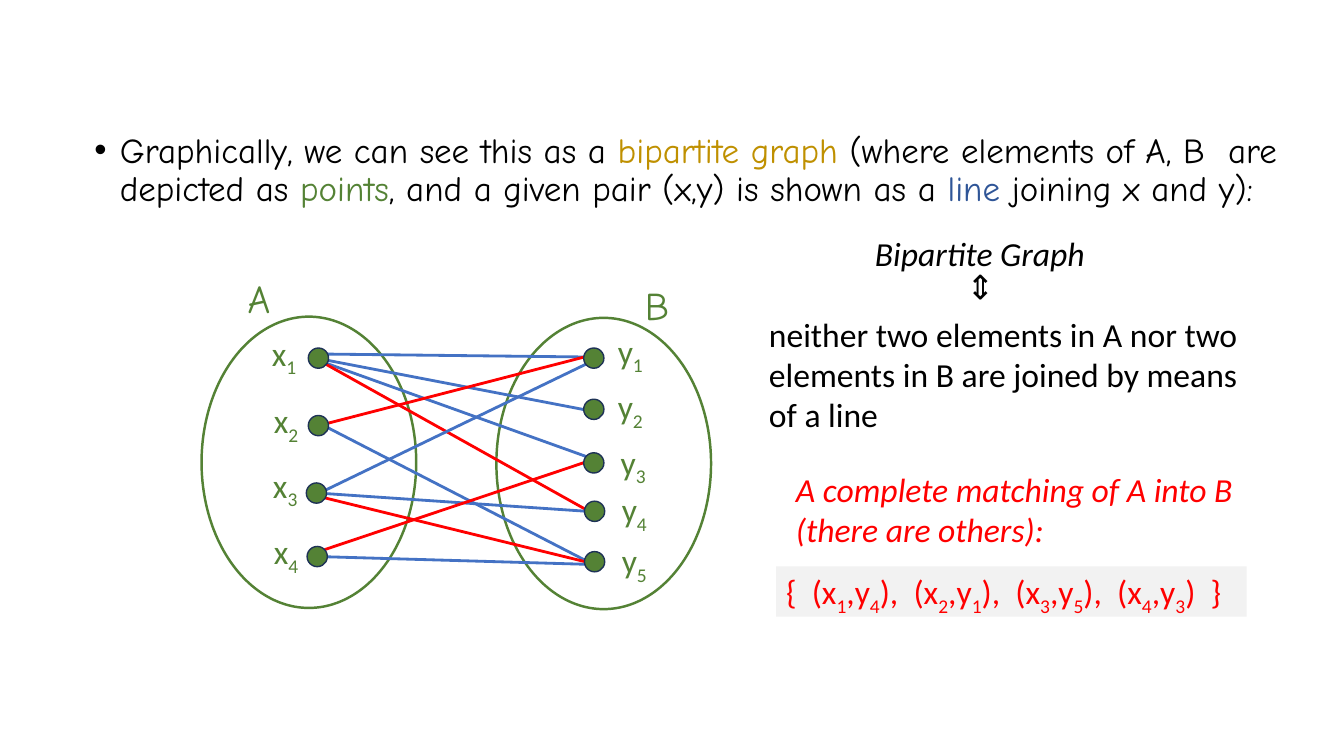
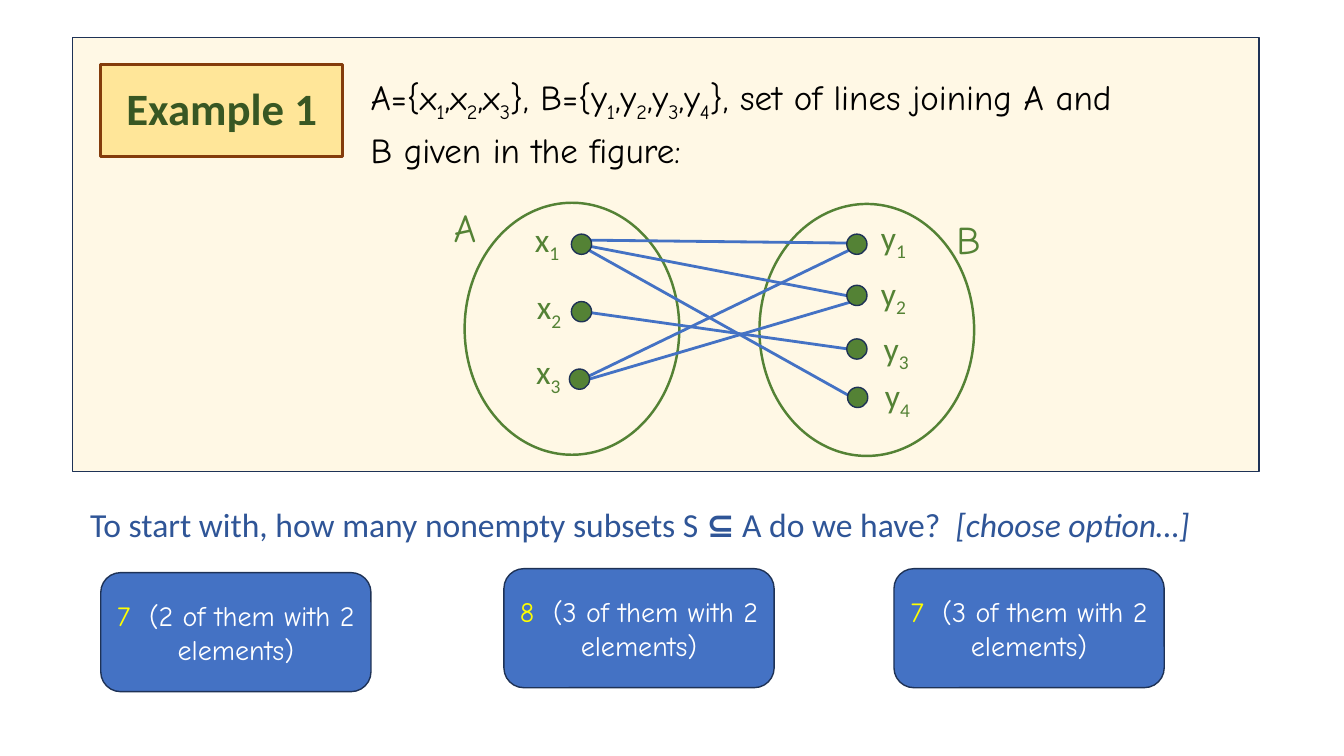
from lxml.etree import SubElement
from pptx import Presentation
from pptx.dml.color import RGBColor
from pptx.enum.shapes import MSO_CONNECTOR, MSO_SHAPE
from pptx.enum.text import MSO_ANCHOR, PP_ALIGN
from pptx.oxml.ns import qn
from pptx.util import Cm, Pt

BLACK = RGBColor(0x00, 0x00, 0x00)
WHITE = RGBColor(0xFF, 0xFF, 0xFF)
GREEN = RGBColor(0x54, 0x82, 0x35)
DARK_GREEN = RGBColor(0x38, 0x57, 0x23)
BLUE = RGBColor(0x44, 0x72, 0xC4)
DARK_BLUE = RGBColor(0x2F, 0x55, 0x97)
NAVY = RGBColor(0x1E, 0x32, 0x56)
RED = RGBColor(0xFF, 0x00, 0x00)
YELLOW = RGBColor(0xFF, 0xFF, 0x00)
GOLD = RGBColor(0xBF, 0x90, 0x00)
CREAM = RGBColor(0xFF, 0xF2, 0xCC)
SAND = RGBColor(0xFF, 0xE6, 0x99)
BROWN = RGBColor(0x84, 0x3C, 0x0B)
GREY = RGBColor(0xF2, 0xF2, 0xF2)
PLAIN, HAND = "Calibri", "Comic Neue"

DOT_SIZE = 0.51
SET_WIDTH, SET_GAP = 5.41, 7.43
X_DOTS = [(2.69, 0.79), (2.69, 2.49), (2.64, 4.19), (2.66, 5.79)]
Y_DOTS = [(9.63, 0.79), (9.63, 2.08), (9.63, 3.43), (9.65, 4.65), (9.65, 5.92)]
X_LABELS = [(1.52, 0.28), (1.57, 1.98), (1.55, 3.61), (1.57, 5.28)]
Y_LABELS = [(10.24, 0.23), (10.24, 1.63), (10.31, 3.02), (10.34, 4.22), (10.34, 5.51)]
EDGES = {
    (1, 1): (2.95, 0.94, 10.06, 1.02),
    (1, 2): (3.02, 1.07, 9.63, 2.34),
    (1, 3): (3.05, 1.14, 10.13, 3.68),
    (1, 4): (3.12, 1.19, 10.08, 5.08),
    (2, 1): (2.97, 2.74, 9.63, 1.02),
    (2, 3): (2.97, 2.74, 9.63, 3.68),
    (2, 5): (3.07, 2.74, 10.08, 6.35),
    (3, 1): (3.02, 4.42, 9.70, 1.19),
    (3, 2): (3.12, 4.45, 9.70, 2.51),
    (3, 4): (3.02, 4.45, 9.65, 4.90),
    (3, 5): (2.92, 4.52, 9.65, 6.17),
    (4, 3): (3.10, 5.87, 9.63, 3.68),
    (4, 5): (3.15, 6.05, 10.06, 6.25),
}
MATCHING = [(1, 4), (2, 1), (3, 5), (4, 3)]


def add_span(para, text, colour=None, bold=None, italic=None):
    """Add text to a paragraph, lowering each character after an underscore."""
    head, *tails = text.split("_")
    pieces = [(head, False)]
    for tail in tails:
        pieces += [(tail[0], True), (tail[1:], False)]
    for piece, lowered in pieces:
        if piece:
            span = para.add_run()
            span.text = piece
            span.font.bold = bold
            span.font.italic = italic
            if colour is not None:
                span.font.color.rgb = colour
            if lowered:
                span.font._element.set("baseline", "-25000")


def write(frame, *spans, font=PLAIN, size=24, colour=BLACK, italic=None, bold=None,
          align=PP_ALIGN.LEFT, before=0, spacing=None, left=0):
    """Write one paragraph of spans, using the first one while it is empty."""
    first = frame.paragraphs[0]
    para = frame.add_paragraph() if first.runs else first
    para.font.name, para.font.size = font, Pt(size)
    para.font.color.rgb = colour
    para.font.italic, para.font.bold = italic, bold
    para.alignment = align
    para.space_before = Pt(before)
    para.line_spacing = spacing
    para._p.get_or_add_pPr().set("marL", str(Cm(left)))
    for span in spans:
        add_span(para, *((span,) if isinstance(span, str) else span))
    return para


def add_box(page, left, top, width, height, wrap=True):
    """Add a text box and return it."""
    box = page.shapes.add_textbox(Cm(left), Cm(top), Cm(width), Cm(height))
    box.text_frame.word_wrap = wrap
    return box


def add_figure(page, kind, left, top, width, height, fill=None, line=None, weight=1):
    """Add a flat preset shape."""
    figure = page.shapes.add_shape(kind, Cm(left), Cm(top), Cm(width), Cm(height))
    figure.shadow.inherit = False
    if fill is None:
        figure.fill.background()
    else:
        figure.fill.solid()
        figure.fill.fore_color.rgb = fill
    if line is None:
        figure.line.fill.background()
    else:
        figure.line.color.rgb = line
        figure.line.width = Pt(weight)
    return figure


def add_edge(page, left, top, ends, colour):
    """Draw one line of the graph."""
    x1, y1, x2, y2 = ends
    edge = page.shapes.add_connector(MSO_CONNECTOR.STRAIGHT, Cm(left + x1), Cm(top + y1),
                                     Cm(left + x2), Cm(top + y2))
    edge.line.color.rgb = colour
    edge.line.width = Pt(2)
    SubElement(edge._element.spPr, qn("a:effectLst"))


def add_graph(page, left, top, height, x_count, y_count, pairs, names, matching=()):
    """Draw a bipartite graph whose first set starts at left, top."""
    for offset, drop in ((0, 0), (SET_GAP, 0.03)):
        add_figure(page, MSO_SHAPE.OVAL, left + offset, top + drop, SET_WIDTH, height,
                   line=GREEN, weight=1.75)
    for name, (x, y) in names.items():
        box = add_box(page, left + x, top + y, 1.2, 1.45, wrap=False)
        write(box.text_frame, name, font=HAND, size=28, colour=GREEN)
    for pair in pairs:
        add_edge(page, left, top, EDGES[pair], RED if pair in matching else BLUE)
    for letter, dots, labels, count in (("x", X_DOTS, X_LABELS, x_count),
                                        ("y", Y_DOTS, Y_LABELS, y_count)):
        for number, (dot, label) in enumerate(zip(dots[:count], labels), 1):
            add_figure(page, MSO_SHAPE.OVAL, left + dot[0], top + dot[1],
                       DOT_SIZE, DOT_SIZE, GREEN, NAVY)
            box = add_box(page, left + label[0], top + label[1], 1.18, 1.27, wrap=False)
            write(box.text_frame, f"{letter}_{number}", colour=GREEN)


def add_introduction(page, left, top, width, height):
    """Write the bulleted opening sentence."""
    box = add_box(page, left, top, width, height)
    para = write(box.text_frame, "Graphically, we can see this as a ",
                 ("bipartite graph ", GOLD), "(where elements of A, B  are depicted as ",
                 ("points", GREEN), ", and a given pair (x,y) is shown as a ",
                 ("line", DARK_BLUE), " joining x and y):",
                 font=HAND, size=25, before=10, spacing=0.9, left=0.64)
    properties = para._p.get_or_add_pPr()
    properties.set("indent", str(Cm(-0.64)))
    bullet_font = properties.makeelement(qn("a:buFont"), {"typeface": "Arial"})
    bullet = properties.makeelement(qn("a:buChar"), {"char": "•"})
    defaults = properties.find(qn("a:defRPr"))
    defaults.addprevious(bullet_font)
    defaults.addprevious(bullet)


def add_explanation(page, left, top):
    """Write the definition and the complete matching beside the graph."""
    frame = add_box(page, left, top, 12.8, 5.38).text_frame
    write(frame, "Bipartite Graph", italic=True, left=2.67)
    write(frame, "neither two elements in A nor two", before=29)
    write(frame, "elements in B are joined by means")
    write(frame, "of a line")
    arrow = add_box(page, left + 4.95, top + 0.97, 1.4, 1.27, wrap=False)
    arrow.rotation = 90
    write(arrow.text_frame, "⇔")
    frame = add_box(page, left + 0.3, top + 5.94, 12.4, 2.4).text_frame
    for line in ("A complete matching of A into B", "(there are others):"):
        write(frame, line, colour=RED, italic=True, left=0.38)
    formula = add_figure(page, MSO_SHAPE.RECTANGLE, left + 0.43, top + 8.53, 11.86, 1.27, GREY)
    formula.text_frame.vertical_anchor = MSO_ANCHOR.TOP
    formula.text_frame.word_wrap = False
    pairs = ",  ".join(f"(x_{x},y_{y})" for x, y in MATCHING)
    write(formula.text_frame, "{  " + pairs + "  }", colour=RED)


def add_example(page, left, top, width, height):
    """Draw the example panel with its tag, statement and graph."""
    panel = add_figure(page, MSO_SHAPE.RECTANGLE, left, top, width, height, CREAM, NAVY)
    colour = panel._element.spPr.find(qn("a:solidFill"))[0]
    SubElement(colour, qn("a:alpha"), val="50000")
    tag = add_figure(page, MSO_SHAPE.RECTANGLE, left + 0.71, top + 0.69, 6.1, 2.31,
                     SAND, BROWN, 2)
    tag.text_frame.vertical_anchor = MSO_ANCHOR.MIDDLE
    write(tag.text_frame, "Example 1", size=32, colour=DARK_GREEN, bold=True,
          align=PP_ALIGN.CENTER, spacing=0.9)
    frame = add_box(page, left + 7.26, top + 0.86, 22.94, 3.15).text_frame
    for line in ("A={x_1,x_2,x_3}, B={y_1,y_2,y_3,y_4}, set of lines joining A and",
                 "B given in the figure:"):
        write(frame, line, font=HAND, size=25, before=10, spacing=0.9)
    add_graph(page, left + 9.88, top + 4.17, 6.35, 3, 4,
              [(1, 1), (1, 2), (1, 4), (3, 1), (3, 2), (2, 3)],
              {"A": (-0.53, -0.1), "B": (12.14, 0.18)})


def add_option(page, left, top, count, detail):
    """Draw one rounded answer button."""
    button = add_figure(page, MSO_SHAPE.ROUNDED_RECTANGLE, left, top, 6.81, 3, BLUE, NAVY)
    button.text_frame.vertical_anchor = MSO_ANCHOR.MIDDLE
    button.text_frame.word_wrap = True
    write(button.text_frame, (count, YELLOW), "  " + detail, font=HAND, size=20,
          colour=WHITE, align=PP_ALIGN.CENTER)


def build_graph_page(page):
    """Build the page that introduces bipartite graphs."""
    add_introduction(page, 2.13, 3.23, 30.48, 3.15)
    add_graph(page, 5.08, 7.98, 7.34, 4, 5,
              [(1, 1), (1, 2), (1, 3), (1, 4), (2, 5), (3, 1), (3, 4), (3, 5),
               (4, 5), (4, 3), (2, 1)],
              {"A": (0.91, -1.19), "B": (10.92, -1.02)}, MATCHING)
    add_explanation(page, 19.13, 5.74)


def build_example_page(page):
    """Build the page with the example and its question."""
    add_example(page, 1.83, 0.94, 29.9, 10.95)
    question = add_box(page, 2.02, 12.57, 30, 1.3)
    write(question.text_frame, "To start with, how many nonempty subsets S ",
          ("⊆ ", None, True), "A do we have?  ", ("[choose option…]", None, None, True),
          colour=DARK_BLUE)
    for left, top, count, detail in (
            (2.54, 14.43, "7", "(2 of them with 2 elements)"),
            (12.7, 14.33, "8", "(3 of them with 2 elements)"),
            (22.53, 14.33, "7", "(3 of them with 2 elements)")):
        add_option(page, left, top, count, detail)


def main():
    """Build and save the deck."""
    deck = Presentation()
    deck.slide_width, deck.slide_height = Cm(33.87), Cm(19.05)
    for build in (build_graph_page, build_example_page):
        build(deck.slides.add_slide(deck.slide_layouts[6]))
    deck.save("out.pptx")


if __name__ == "__main__":
    main()
